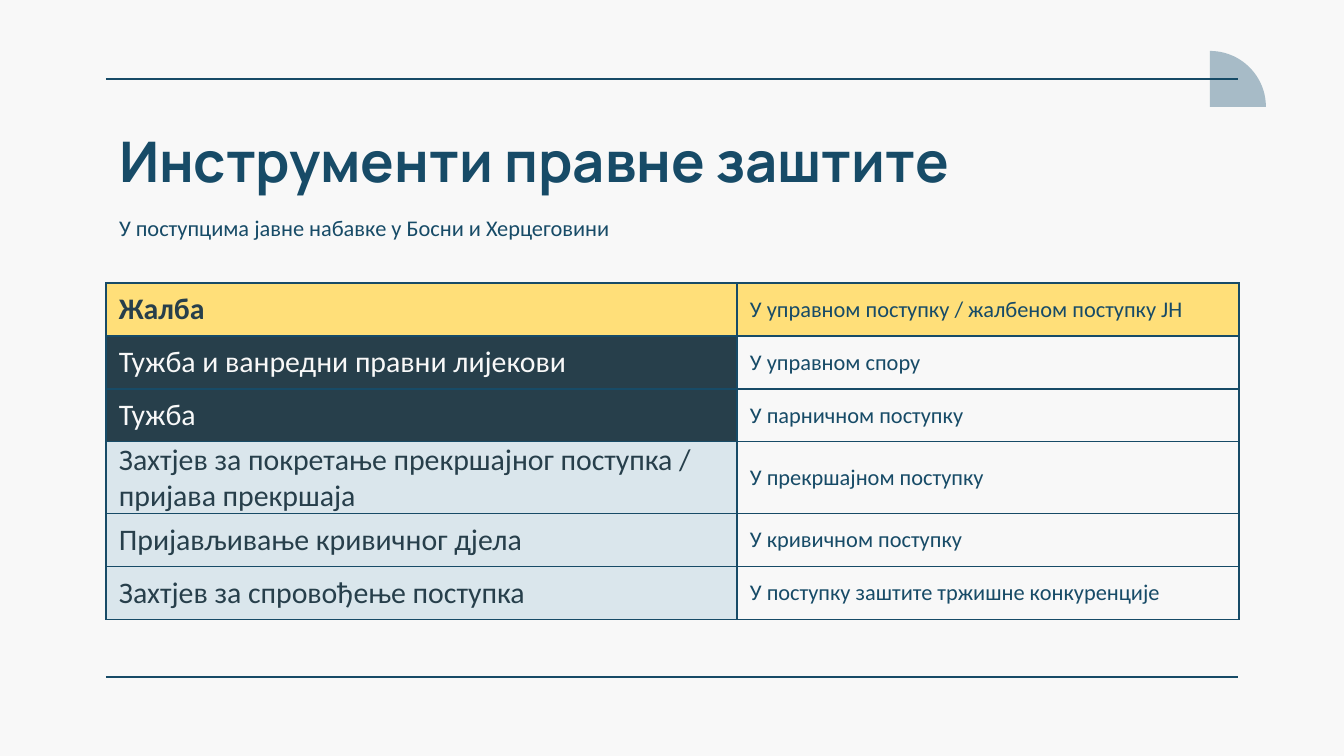
"""Build a slide listing the legal protection instruments in public procurement."""
import math
from dataclasses import dataclass

from lxml import etree
from pptx import Presentation
from pptx import util as u
from pptx.dml.color import RGBColor
from pptx.enum import shapes, text
from pptx.oxml.ns import qn

EMU_PER_PX = 914400 / 134.4
LEFT, RIGHT = 106, 1238
INSET = 13


@dataclass(frozen=True)
class Theme:
    """Colours, fonts and type sizes of the slide."""
    paper: str = "F8F8F8"
    navy: str = "174B67"
    slate: str = "273F4B"
    pale: str = "DAE6EC"
    yellow: str = "FFDF79"
    mist: str = "A7BBC7"
    heading_font: str = "Manrope"
    body_font: str = "Calibri"
    title_size: int = 30
    instrument_size: int = 16
    small_size: int = 12
    rule_width: float = 0.75


THEME = Theme()
HIGHLIGHT = (THEME.yellow, THEME.slate, THEME.yellow)
DARK = (THEME.slate, THEME.paper, None)
LIGHT = (THEME.pale, THEME.slate, None)

INSTRUMENTS = [
    ("Жалба", "У управном поступку / жалбеном поступку ЈН", HIGHLIGHT),
    ("Тужба и ванредни правни лијекови", "У управном спору", DARK),
    ("Тужба", "У парничном поступку", DARK),
    ("Захтјев за покретање прекршајног поступка / пријава прекршаја",
     "У прекршајном поступку", LIGHT),
    ("Пријављивање кривичног дјела", "У кривичном поступку", LIGHT),
    ("Захтјев за спровођење поступка",
     "У поступку заштите тржишне конкуренције", LIGHT),
]


def px(length):
    """Turn whole pixels into EMU."""
    return u.Emu(round(length * EMU_PER_PX))


def rgb(colour):
    """Turn a hex string into a colour."""
    return RGBColor.from_string(colour)


def add_run(paragraph, words, size, colour, font=THEME.body_font, bold=False):
    """Add one formatted run to a paragraph."""
    run = paragraph.add_run()
    run.text = words
    run.font.name = font
    run.font.size = u.Pt(size)
    run.font.bold = bold
    run.font.color.rgb = rgb(colour)


def add_text(slide, top, height, words, size, **style):
    """Add a one-line text box across the content width."""
    frame = slide.shapes.add_textbox(
        px(LEFT), px(top), px(RIGHT - LEFT), px(height)).text_frame
    frame.word_wrap = True
    frame.vertical_anchor = text.MSO_ANCHOR.TOP
    frame.margin_left = frame.margin_right = px(INSET)
    frame.margin_top = frame.margin_bottom = px(INSET)
    add_run(frame.paragraphs[0], words, size, THEME.navy, **style)


def add_rule(slide, y):
    """Add a thin horizontal rule across the content width."""
    rule = slide.shapes.add_connector(
        shapes.MSO_CONNECTOR.STRAIGHT, px(LEFT), px(y), px(RIGHT), px(y))
    rule.line.color.rgb = rgb(THEME.navy)
    rule.line.width = u.Pt(THEME.rule_width)
    etree.SubElement(rule._element.spPr, qn("a:effectLst"))


def add_quarter_disc(slide, x, y, radius, steps=32):
    """Add a quarter disc whose square corner lies at x, y."""
    angles = [math.pi / 2 * step / steps for step in range(steps + 1)]
    arc = [(px(x + radius * math.cos(a)), px(y - radius * math.sin(a)))
           for a in angles]
    builder = slide.shapes.build_freeform(px(x), px(y))
    builder.add_line_segments(arc, close=True)
    disc = builder.convert_to_shape()
    disc.shadow.inherit = False
    disc.fill.solid()
    disc.fill.fore_color.rgb = rgb(THEME.mist)
    disc.line.fill.background()


def add_borders(cell):
    """Draw a thin border on all sides of a cell."""
    properties = cell._tc.get_or_add_tcPr()
    for side in ("lnL", "lnR", "lnT", "lnB"):
        border = etree.SubElement(properties, qn(f"a:{side}"),
                                  w=str(u.Pt(THEME.rule_width)))
        solid = etree.SubElement(border, qn("a:solidFill"))
        etree.SubElement(solid, qn("a:srgbClr"), val=THEME.navy)


def fill_cell(cell, words, size, colour, fill, bold=False):
    """Write and format one table cell."""
    cell.vertical_anchor = text.MSO_ANCHOR.MIDDLE
    cell.margin_left = cell.margin_right = px(INSET)
    cell.margin_top = cell.margin_bottom = 0
    add_borders(cell)
    if fill:
        cell.fill.solid()
        cell.fill.fore_color.rgb = rgb(fill)
    else:
        cell.fill.background()
    add_run(cell.text_frame.paragraphs[0], words, size, colour, bold=bold)


def add_instruments(slide, top, row_height, widths):
    """Add the table of instruments and their procedures."""
    table = slide.shapes.add_table(
        len(INSTRUMENTS), len(widths), px(LEFT), px(top),
        px(sum(widths)), px(row_height * len(INSTRUMENTS))).table
    table.first_row = table.horz_banding = False
    for column, width in zip(table.columns, widths):
        column.width = px(width)
    for row, (instrument, procedure, look) in zip(table.rows, INSTRUMENTS):
        row.height = px(row_height)
        fill, colour, procedure_fill = look
        fill_cell(row.cells[0], instrument, THEME.instrument_size, colour,
                  fill, bold=look is HIGHLIGHT)
        fill_cell(row.cells[1], procedure, THEME.small_size, THEME.navy,
                  procedure_fill)


def main():
    """Build and save the slide."""
    deck = Presentation()
    deck.slide_width, deck.slide_height = px(1344), px(756)
    slide = deck.slides.add_slide(deck.slide_layouts[6])
    slide.background.fill.solid()
    slide.background.fill.fore_color.rgb = rgb(THEME.paper)
    add_quarter_disc(slide, 1210, 107, 56)
    for y in (79, 677):
        add_rule(slide, y)
    add_text(slide, 114, 85, "Инструменти правне заштите", THEME.title_size,
             font=THEME.heading_font, bold=True)
    add_instruments(slide, 283, 53, (631, 502))
    add_text(slide, 201, 57, "У поступцима јавне набавке у Босни и Херцеговини",
             THEME.small_size)
    deck.save("out.pptx")


if __name__ == "__main__":
    main()
